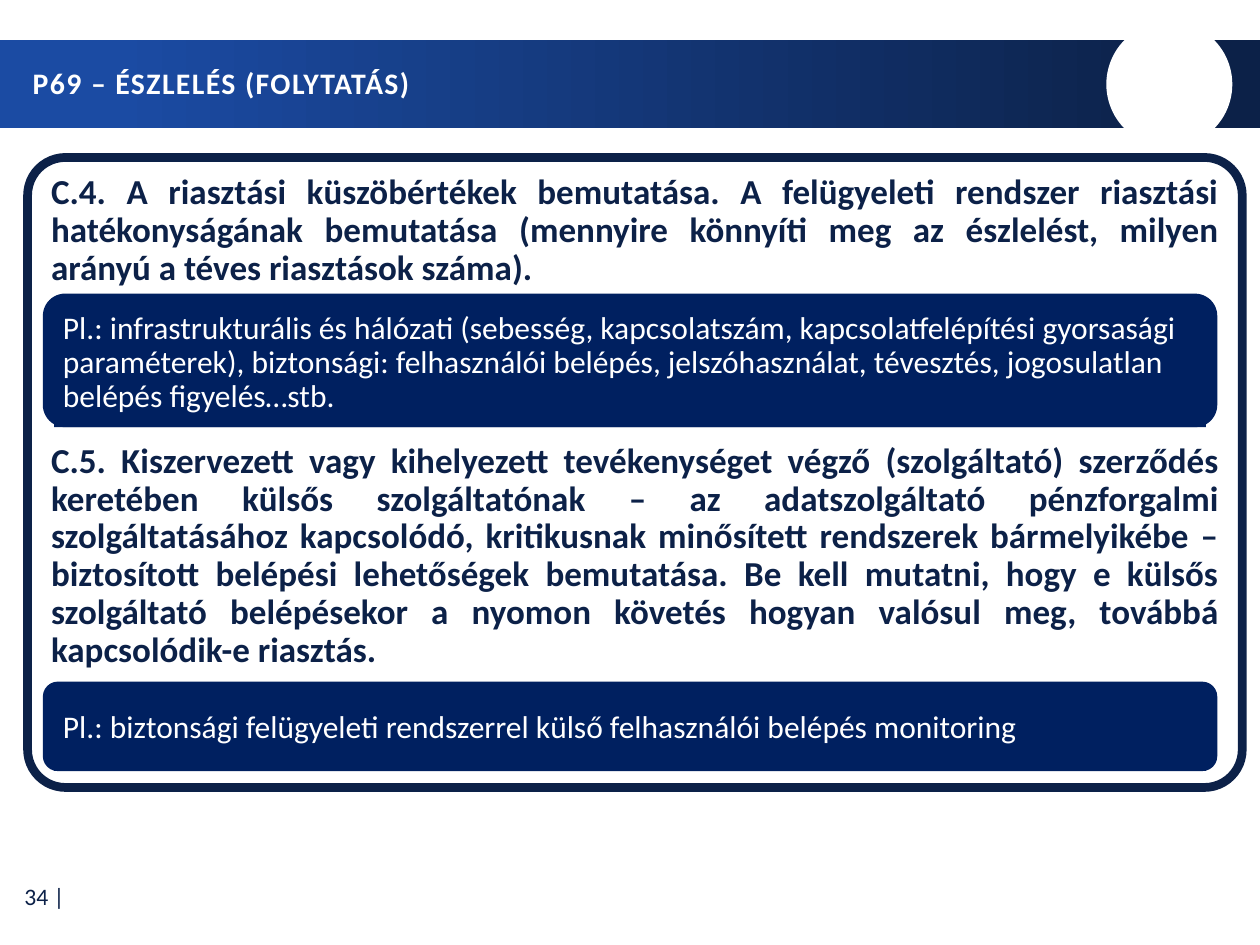
from dataclasses import dataclass

from pptx import Presentation
from pptx.dml.color import RGBColor
from pptx.enum.shapes import MSO_SHAPE as Shape
from pptx.enum.text import MSO_ANCHOR as Anchor, PP_ALIGN as Align
from pptx.util import Pt


@dataclass(frozen=True)
class Theme:
    font: str = "Calibri"
    navy: RGBColor = RGBColor(0x0C, 0x21, 0x48)
    blue: RGBColor = RGBColor(0x1B, 0x4B, 0xA3)
    card: RGBColor = RGBColor(0x00, 0x20, 0x60)
    white: RGBColor = RGBColor(0xFF, 0xFF, 0xFF)
    title_size: float = 17
    body_size: float = 20
    example_size: float = 18
    number_size: float = 13.5
    line_spacing: float = 0.9


THEME = Theme()

TITLE = "P69 – ÉSZLELÉS (FOLYTATÁS)"
ALERT_TOPIC = (
    "C.4. A riasztási küszöbértékek bemutatása. A felügyeleti rendszer riasztási "
    "hatékonyságának bemutatása (mennyire könnyíti meg az észlelést, milyen arányú "
    "a téves riasztások száma)."
)
ALERT_EXAMPLE = (
    "Pl.: infrastrukturális és hálózati (sebesség, kapcsolatszám, kapcsolatfelépítési "
    "gyorsasági paraméterek), biztonsági: felhasználói belépés, jelszóhasználat, "
    "tévesztés, jogosulatlan belépés figyelés…stb."
)
ACCESS_TOPIC = (
    "C.5. Kiszervezett vagy kihelyezett tevékenységet végző (szolgáltató) szerződés "
    "keretében külsős szolgáltatónak – az adatszolgáltató pénzforgalmi "
    "szolgáltatásához kapcsolódó, kritikusnak minősített rendszerek bármelyikébe – "
    "biztosított belépési lehetőségek bemutatása. Be kell mutatni, hogy e külsős "
    "szolgáltató belépésekor a nyomon követés hogyan valósul meg, továbbá "
    "kapcsolódik-e riasztás."
)
ACCESS_EXAMPLE = (
    "Pl.: biztonsági felügyeleti rendszerrel külső felhasználói belépés monitoring"
)


def add_shape(page, kind, left, top, width, height, color=None):
    shape = page.shapes.add_shape(kind, Pt(left), Pt(top), Pt(width), Pt(height))
    shape.shadow.inherit = False
    shape.line.fill.background()
    if color is None:
        shape.fill.background()
    else:
        shape.fill.solid()
        shape.fill.fore_color.rgb = color
    return shape


def write(para, text, size, color, bold=False, align=Align.LEFT):
    para.alignment = align
    para.line_spacing = THEME.line_spacing
    span = para.add_run()
    span.text = text
    span.font.name = THEME.font
    span.font.size = Pt(size)
    span.font.bold = bold
    span.font.color.rgb = color
    return span


def add_header(page, left, top, width, height):
    band = add_shape(page, Shape.RECTANGLE, left, top, width, height)
    band.fill.gradient()
    band.fill.gradient_angle = 0
    stops = ((0.09, THEME.blue), (0.95, THEME.navy))
    for stop, (position, color) in zip(band.fill.gradient_stops, stops):
        stop.position = position
        stop.color.rgb = color
    add_shape(page, Shape.OVAL, left + 632.2, top - 10.8, 72, 72, THEME.white)

    title = page.shapes.title
    page.shapes.element.append(title.element)
    title.left, title.top = Pt(left + 11.5), Pt(top + 1.4)
    title.width, title.height = Pt(640.8), Pt(height - 2.2)
    title.text_frame.vertical_anchor = Anchor.MIDDLE
    title.text_frame.word_wrap = True
    span = write(title.text_frame.paragraphs[0], TITLE, THEME.title_size,
                 THEME.white, bold=True)
    span.font._element.set("spc", "80")


def add_example(page, left, top, width, height, text, inset):
    add_shape(page, Shape.ROUNDED_RECTANGLE, left, top, width, height, THEME.card)
    box = add_shape(page, Shape.RECTANGLE, left + 6.5, top + inset,
                    width - 13, height - inset, THEME.card)
    frame = box.text_frame
    frame.word_wrap = True
    frame.vertical_anchor = Anchor.MIDDLE
    frame.margin_left = frame.margin_right = Pt(5)
    frame.margin_top = frame.margin_bottom = Pt(5)
    write(frame.paragraphs[0], text, THEME.example_size, THEME.white)


def add_panel(page, left, top, width, height):
    panel = add_shape(page, Shape.ROUNDED_RECTANGLE, left, top, width, height)
    panel.adjustments[0] = 0.06
    panel.line.color.rgb = THEME.navy
    panel.line.width = Pt(5)
    frame = panel.text_frame
    frame.word_wrap = True
    frame.vertical_anchor = Anchor.TOP
    topics = (frame.paragraphs[0], frame.add_paragraph())
    for para, text in zip(topics, (ALERT_TOPIC, ACCESS_TOPIC)):
        write(para, text, THEME.body_size, THEME.navy, True, Align.JUSTIFY)
    topics[1].space_before = Pt(88.5)

    card_left, card_width = left + 8.7, width - 23
    add_example(page, card_left, top + 77.8, card_width, 76.3, ALERT_EXAMPLE, 3.6)
    add_example(page, card_left, top + 299.5, card_width, 51.1, ACCESS_EXAMPLE, 2.2)


def add_page_number(page, left, top, width, height):
    box = page.shapes.add_textbox(Pt(left), Pt(top), Pt(width), Pt(height))
    frame = box.text_frame
    frame.word_wrap = True
    frame.vertical_anchor = Anchor.MIDDLE
    write(frame.paragraphs[0], "34 |", THEME.number_size, THEME.navy,
          align=Align.RIGHT)


def main():
    deck = Presentation()
    deck.slide_width, deck.slide_height = Pt(720), Pt(540)
    page = deck.slides.add_slide(deck.slide_layouts[5])
    add_page_number(page, 0.7, 499.7, 43.2, 26.6)
    add_header(page, 0, 23, 720, 50.4)
    add_panel(page, 15.8, 90, 694.1, 360)
    deck.save("out.pptx")


if __name__ == "__main__":
    main()
